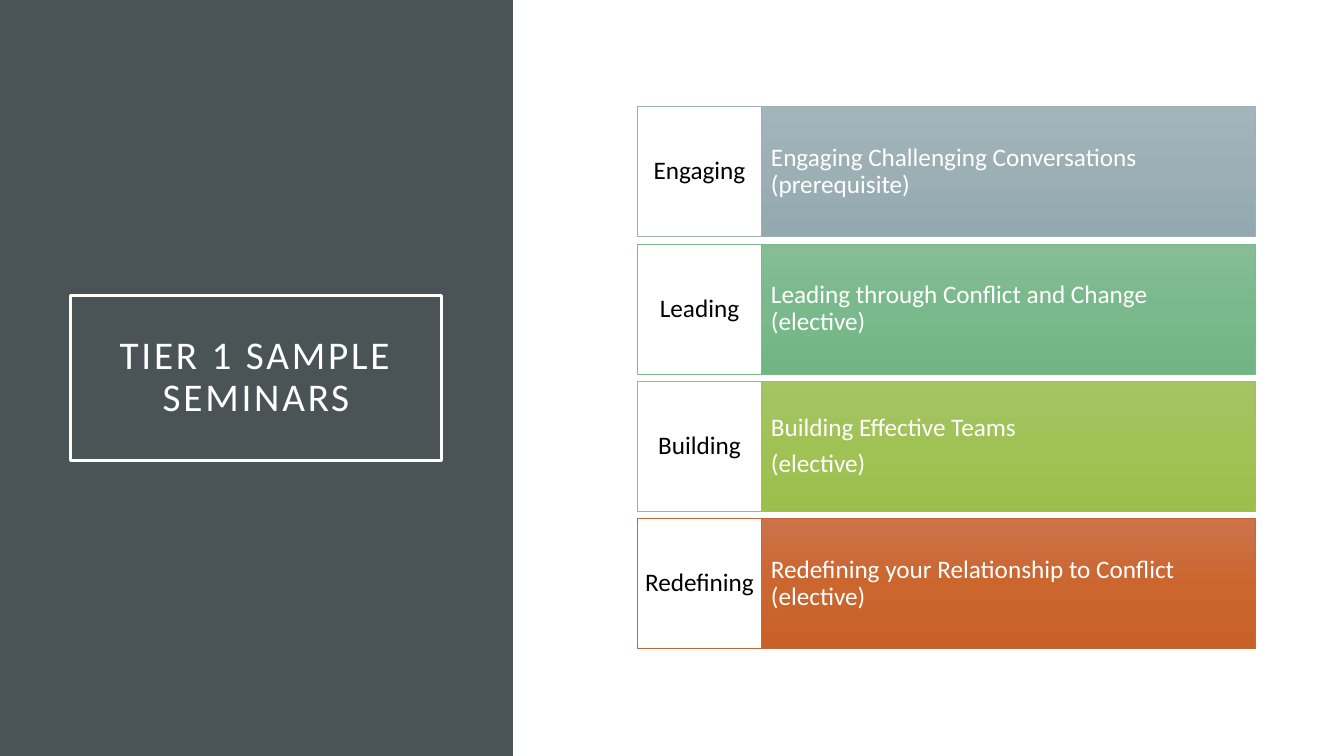
from copy import deepcopy

from pptx import Presentation
from pptx.dml.color import RGBColor
from pptx.enum.shapes import MSO_SHAPE
from pptx.enum.text import MSO_ANCHOR, MSO_AUTO_SIZE, PP_ALIGN
from pptx.oxml.ns import qn
from pptx.util import Cm, Pt

WHITE = RGBColor(0xFF, 0xFF, 0xFF)
BLACK = RGBColor(0x00, 0x00, 0x00)
SLATE = RGBColor(0x4A, 0x53, 0x56)
GREYS = [RGBColor(0xA3, 0xB5, 0xBB), RGBColor(0x9B, 0xAF, 0xB5), RGBColor(0x93, 0xA9, 0xAF)]
GREENS = [RGBColor(0x86, 0xBD, 0x95), RGBColor(0x7A, 0xB9, 0x8B), RGBColor(0x72, 0xB5, 0x84)]
LIMES = [RGBColor(0xA5, 0xC4, 0x66), RGBColor(0xA0, 0xC2, 0x55), RGBColor(0x9B, 0xBE, 0x4D)]
ORANGES = [RGBColor(0xCC, 0x73, 0x4B), RGBColor(0xCB, 0x66, 0x2F), RGBColor(0xC8, 0x61, 0x28)]
GREY_LINE = RGBColor(0x9B, 0xAF, 0xB5)
GREEN_LINE = RGBColor(0x7B, 0xB8, 0x8C)
LIME_LINE = RGBColor(0x9F, 0xC0, 0x57)
ORANGE_LINE = RGBColor(0xC9, 0x67, 0x31)

SEMINARS = [
    ("Engaging", ["Engaging Challenging Conversations (prerequisite)"], GREYS, GREY_LINE),
    ("Leading", ["Leading through Conflict and Change (elective)"], GREENS, GREEN_LINE),
    ("Building", ["Building Effective Teams", "(elective)"], LIMES, LIME_LINE),
    ("Redefining", ["Redefining your Relationship to Conflict (elective)"], ORANGES, ORANGE_LINE),
]
ROW_TOP, ROW_HEIGHT, ROW_PITCH = 2.69, 3.28, 3.46
LABEL_LEFT, LABEL_WIDTH = 16.07, 3.12
BAR_LEFT, BAR_WIDTH = 19.18, 12.47


def add_box(left, top, width, height):
    box = page.shapes.add_shape(MSO_SHAPE.RECTANGLE, Cm(left), Cm(top), Cm(width), Cm(height))
    box.shadow.inherit = False
    return box


def write_text(box, lines, size, color, align, side, edge):
    frame = box.text_frame
    frame.word_wrap = True
    frame.auto_size = MSO_AUTO_SIZE.NONE
    frame.vertical_anchor = MSO_ANCHOR.MIDDLE
    frame.margin_left = frame.margin_right = Cm(side)
    frame.margin_top = frame.margin_bottom = Cm(edge)
    for index, line in enumerate(lines):
        para = frame.add_paragraph() if index else frame.paragraphs[0]
        para.alignment = align
        para.line_spacing = 0.9
        para.space_after = Pt(size * 0.35) if len(lines) > 1 else Pt(0)
        span = para.add_run()
        span.text = line
        span.font.size = Pt(size)
        span.font.name = "Calibri"
        span.font.color.rgb = color


deck = Presentation()
deck.slide_width, deck.slide_height = Cm(33.87), Cm(19.05)
page = deck.slides.add_slide(deck.slide_layouts[5])

panel = add_box(0, 0, 12.93, 19.05)
panel.fill.solid()
panel.fill.fore_color.rgb = SLATE
panel.line.fill.background()

title = page.shapes.title
panel._element.addnext(title._element)
title.left, title.top, title.width, title.height = Cm(1.78), Cm(7.44), Cm(9.35), Cm(4.17)
title.line.color.rgb = WHITE
title.line.width = Pt(2.5)
write_text(title, ["TIER 1 SAMPLE SEMINARS"], 28, WHITE, PP_ALIGN.CENTER, 0.51, 0.51)
title.text_frame.paragraphs[0].runs[0].font._element.set("spc", "200")

for row, (name, lines, shades, outline) in enumerate(SEMINARS):
    top = ROW_TOP + row * ROW_PITCH

    bar = add_box(BAR_LEFT, top, BAR_WIDTH, ROW_HEIGHT)
    bar.fill.gradient()
    bar.fill.gradient_angle = 270
    stop_list = bar._element.spPr.find(qn("a:gradFill")).find(qn("a:gsLst"))
    stop_list.append(deepcopy(stop_list[0]))
    for stop, position, shade in zip(bar.fill.gradient_stops, (0, 0.5, 1), shades):
        stop.position = position
        stop.color.rgb = shade
    write_text(bar, lines, 18, WHITE, PP_ALIGN.LEFT, 0.25, 0.84)

    label = add_box(LABEL_LEFT, top, LABEL_WIDTH, ROW_HEIGHT)
    label.fill.solid()
    label.fill.fore_color.rgb = WHITE
    write_text(label, [name], 18, BLACK, PP_ALIGN.CENTER, 0.15, 0.33)

    for box in (bar, label):
        box.line.color.rgb = outline
        box.line.width = Pt(0.5)

deck.save("out.pptx")
